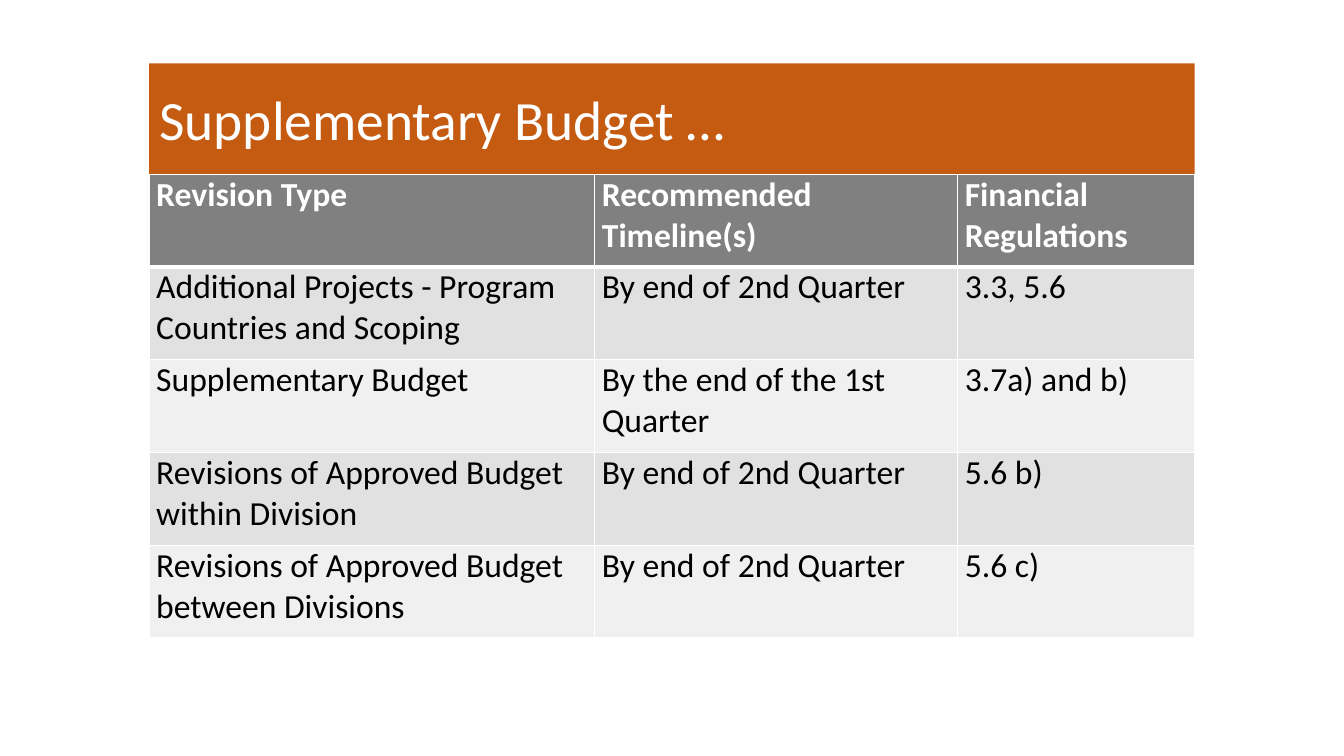
import lxml.etree
import pptx
import pptx.dml.color
import pptx.enum.text
import pptx.oxml.ns
import pptx.util
from pptx.dml.color import RGBColor
from pptx.util import Inches

FONT = "Calibri"
WHITE = RGBColor(0xFF, 0xFF, 0xFF)
BLACK = RGBColor(0x00, 0x00, 0x00)
ORANGE = RGBColor(0xC5, 0x5A, 0x11)
HEADER_GRAY = RGBColor(0x80, 0x80, 0x80)
BAND_GRAYS = (RGBColor(0xE1, 0xE1, 0xE1), RGBColor(0xF0, 0xF0, 0xF0))

COLUMN_WIDTHS = (4.42, 3.6, 2.35)
ROWS = (
    ("Revision Type", "Recommended Timeline(s)", "Financial Regulations"),
    ("Additional Projects - Program Countries and Scoping", "By end of 2nd Quarter", "3.3, 5.6"),
    ("Supplementary Budget", "By the end of the 1st Quarter", "3.7a) and b)"),
    ("Revisions of Approved Budget within Division", "By end of 2nd Quarter", "5.6 b)"),
    ("Revisions of Approved Budget between Divisions", "By end of 2nd Quarter", "5.6 c)"),
)


def format_text(text_frame, size, color, bold=False):
    for paragraph in text_frame.paragraphs:
        for run in paragraph.runs:
            run.font.name = FONT
            run.font.size = pptx.util.Pt(size)
            run.font.color.rgb = color
            run.font.bold = bold


def set_borders(cell, top, bottom):
    """Draw white borders; top and bottom are widths in points."""
    properties = cell._tc.get_or_add_tcPr()
    widths = {"a:lnL": 1, "a:lnR": 1, "a:lnT": top, "a:lnB": bottom}
    for position, (tag, width) in enumerate(widths.items()):
        line = lxml.etree.Element(pptx.oxml.ns.qn(tag), w=str(pptx.util.Pt(width)))
        fill = lxml.etree.SubElement(line, pptx.oxml.ns.qn("a:solidFill"))
        lxml.etree.SubElement(fill, pptx.oxml.ns.qn("a:srgbClr"), val=str(WHITE))
        properties.insert(position, line)


def add_title(slide, left, top, width, height):
    title = slide.shapes.title
    title.left, title.top = Inches(left), Inches(top)
    title.width, title.height = Inches(width), Inches(height)
    title.fill.solid()
    title.fill.fore_color.rgb = ORANGE
    text_frame = title.text_frame
    text_frame.text = "Supplementary Budget …"
    text_frame.auto_size = pptx.enum.text.MSO_AUTO_SIZE.NONE
    text_frame.vertical_anchor = pptx.enum.text.MSO_ANCHOR.MIDDLE
    paragraph = text_frame.paragraphs[0]
    paragraph.alignment = pptx.enum.text.PP_ALIGN.LEFT
    paragraph.line_spacing = 0.9
    format_text(text_frame, 39.6, WHITE)


def add_revision_table(slide, left, top, width, height):
    table = slide.shapes.add_table(
        len(ROWS), len(COLUMN_WIDTHS),
        Inches(left), Inches(top), Inches(width), Inches(height),
    ).table
    for column, column_width in zip(table.columns, COLUMN_WIDTHS):
        column.width = Inches(column_width)
    for row_index, texts in enumerate(ROWS):
        is_header = row_index == 0
        for column_index, text in enumerate(texts):
            cell = table.cell(row_index, column_index)
            cell.text_frame.text = text
            cell.margin_left = cell.margin_right = Inches(0.07)
            cell.margin_top = cell.margin_bottom = 0
            cell.fill.solid()
            cell.fill.fore_color.rgb = HEADER_GRAY if is_header else BAND_GRAYS[(row_index - 1) % 2]
            format_text(cell.text_frame, 24, WHITE if is_header else BLACK, is_header)
            set_borders(cell, top=3 if row_index == 1 else 1, bottom=3 if is_header else 1)


def main():
    presentation = pptx.Presentation()
    presentation.slide_width = Inches(13.33)
    presentation.slide_height = Inches(7.5)
    slide = presentation.slides.add_slide(presentation.slide_layouts[5])
    add_title(slide, 1.48, 0.63, 10.37, 1.17)
    add_revision_table(slide, 1.48, 1.73, sum(COLUMN_WIDTHS), 4.6)
    presentation.save("out.pptx")


if __name__ == "__main__":
    main()
